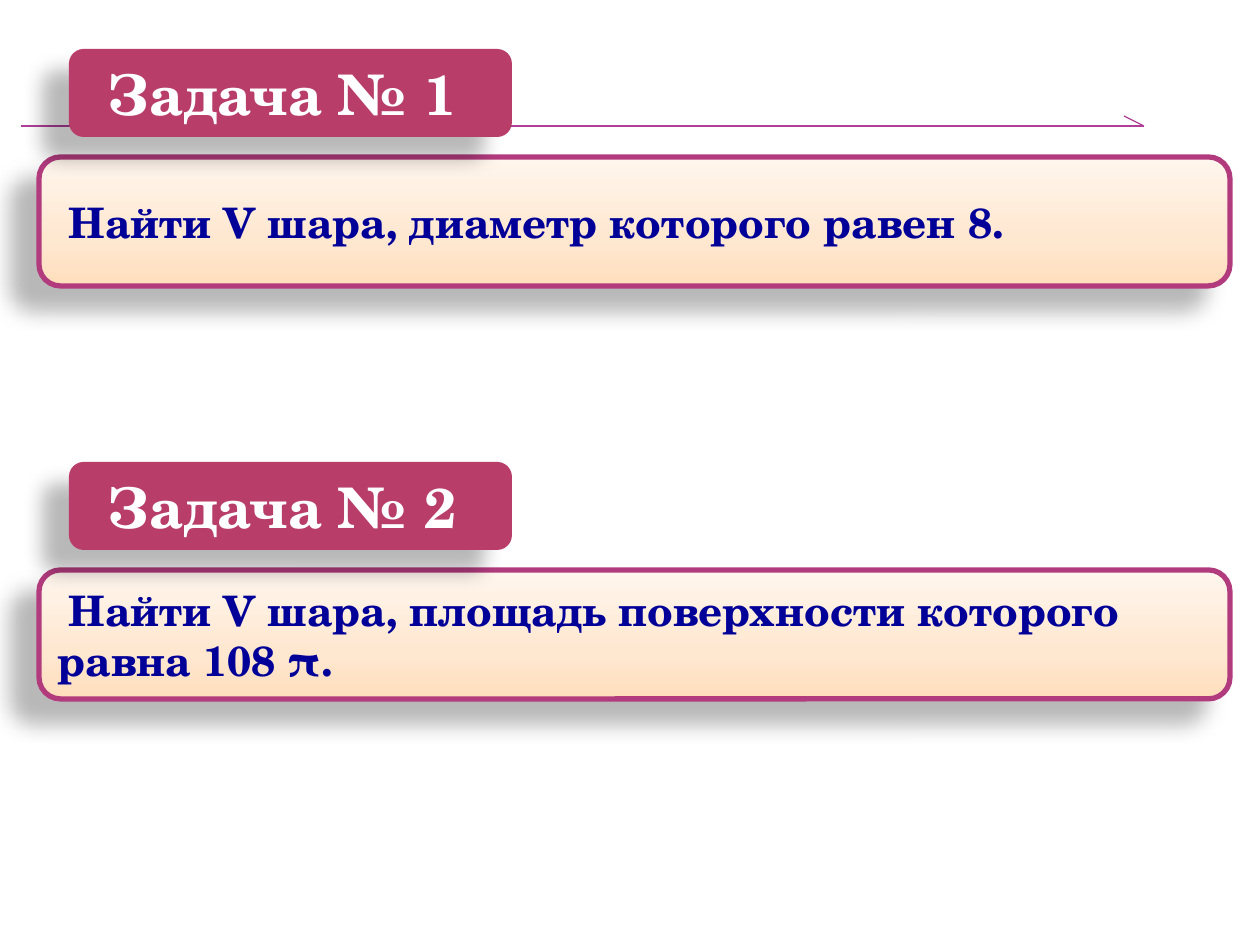
import copy

import lxml.etree
import pptx
import pptx.dml.color
import pptx.enum.shapes
import pptx.enum.text
import pptx.oxml.ns
import pptx.util

RGB = pptx.dml.color.RGBColor
SHAPES = pptx.enum.shapes
ALIGN = pptx.enum.text.PP_ALIGN
qn = pptx.oxml.ns.qn

PX_PER_INCH = 126
FONT = "TeX Gyre Schola"
WHITE = RGB(0xFF, 0xFF, 0xFF)
NAVY = RGB(0x00, 0x00, 0x99)
RASPBERRY = RGB(0xB8, 0x3D, 0x68)
BORDER = RGB(0xB2, 0x3B, 0x7E)
PURPLE = RGB(0xB1, 0x3F, 0x9A)
PEACH_STOPS = [
    (0, RGB(0xFF, 0xDE, 0xBC)),
    (0.35, RGB(0xFF, 0xE7, 0xD0)),
    (1, RGB(0xFF, 0xF6, 0xED)),
]

TASK_STEP = 413
TASKS = [
    ("Задача № 1", "Найти V шара, диаметр которого равен 8."),
    ("Задача № 2", "Найти V шара, площадь поверхности которого равна 108 π."),
]


def px(n):
    return pptx.util.Emu(round(n * 914400 / PX_PER_INCH))


def set_attrs(obj, values):
    for name, value in values.items():
        setattr(obj, name, value)


def add_line(s, x1, y1, x2, y2):
    line = s.shapes.add_connector(
        SHAPES.MSO_CONNECTOR.STRAIGHT, px(x1), px(y1), px(x2), px(y2))
    line.line.color.rgb = PURPLE
    line.line.width = pptx.util.Pt(0.75)
    lxml.etree.SubElement(line._element.spPr, qn("a:effectLst"))


def add_shadow(sp):
    """Give the shape a soft shadow towards the lower left."""
    sp.shadow.inherit = False
    effects = sp._element.spPr.find(qn("a:effectLst"))
    shadow = lxml.etree.SubElement(
        effects, qn("a:outerShdw"), blurRad=str(pptx.util.Pt(11.8)),
        dist=str(pptx.util.Pt(19.7)), dir=str(141 * 60000), rotWithShape="0")
    color = lxml.etree.SubElement(shadow, qn("a:srgbClr"), val="000000")
    lxml.etree.SubElement(color, qn("a:alpha"), val="28000")


def fill_gradient(sp, stops):
    """Fill from bottom to top with three colour stops."""
    sp.fill.gradient()
    sp.fill.gradient_angle = 90
    first = sp._element.spPr.find(".//" + qn("a:gs"))
    first.addnext(copy.deepcopy(first))
    for stop, (position, color) in zip(sp.fill.gradient_stops, stops):
        stop.position = position
        stop.color.rgb = color


def add_round_box(s, x, y, w, h, text, align, font):
    sp = s.shapes.add_shape(
        SHAPES.MSO_SHAPE.ROUNDED_RECTANGLE, px(x), px(y), px(w), px(h))
    add_shadow(sp)
    tf = sp.text_frame
    set_attrs(tf, {"word_wrap": True,
                   "vertical_anchor": pptx.enum.text.MSO_ANCHOR.MIDDLE})
    p = tf.paragraphs[0]
    p.alignment = align
    r = p.add_run()
    r.text = text
    set_attrs(r.font, {"name": FONT, "bold": True,
                       "size": pptx.util.Pt(font["size"])})
    r.font.color.rgb = font["color"]
    return sp


def add_question(s, y, text):
    sp = add_round_box(s, 39, y, 1191, 129, text, ALIGN.LEFT,
                       {"size": 24, "color": NAVY})
    fill_gradient(sp, PEACH_STOPS)
    sp.line.color.rgb = BORDER
    sp.line.width = pptx.util.Pt(3)
    sp.text_frame.paragraphs[0]._p.get_or_add_pPr().set("indent", str(px(11)))


def add_label(s, y, text):
    sp = add_round_box(s, 69, y, 443, 88, text, ALIGN.CENTER,
                       {"size": 32, "color": WHITE})
    sp.fill.solid()
    sp.fill.fore_color.rgb = RASPBERRY
    sp.line.fill.background()
    sp.text_frame.margin_right = px(29)


def main():
    prs = pptx.Presentation()
    set_attrs(prs, {"slide_width": px(1260), "slide_height": px(945)})
    s = prs.slides.add_slide(prs.slide_layouts[6])
    add_line(s, 21, 126, 1144, 126)
    add_line(s, 1124, 116, 1144, 126)
    for i, (label, question) in enumerate(TASKS):
        top = 49 + i * TASK_STEP
        add_question(s, top + 108, question)
        add_label(s, top, label)
    prs.save("out.pptx")


if __name__ == "__main__":
    main()
